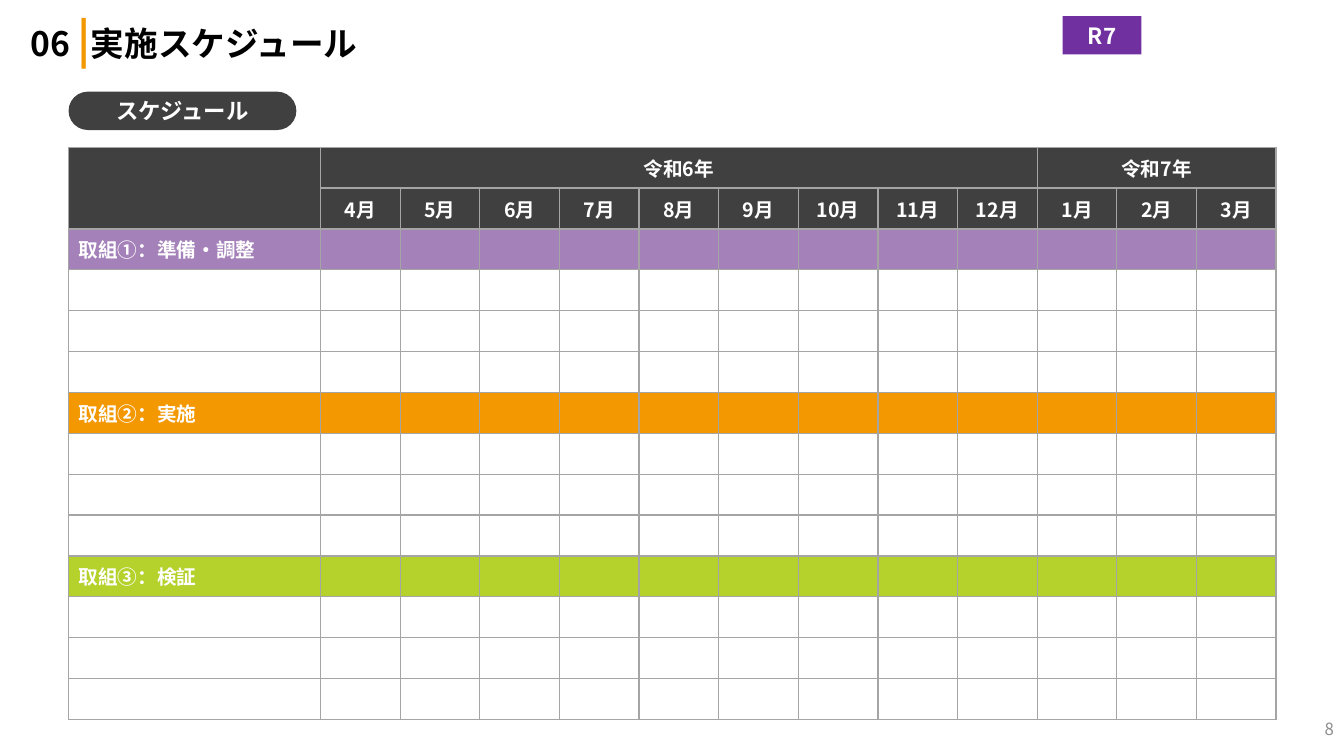
from lxml import etree
from pptx import Presentation
from pptx.dml.color import RGBColor
from pptx.enum.shapes import MSO_SHAPE
from pptx.enum.text import MSO_ANCHOR, PP_ALIGN
from pptx.oxml.ns import qn
from pptx.util import Inches, Pt

ROUND = MSO_SHAPE.ROUNDED_RECTANGLE
MIDDLE = MSO_ANCHOR.MIDDLE
LEFT, CENTER, RIGHT = PP_ALIGN.LEFT, PP_ALIGN.CENTER, PP_ALIGN.RIGHT
FONT = "Noto Sans CJK JP"
COLORS = {
    "black": "000000", "white": "FFFFFF", "dark": "404040",
    "grid": "A5A5A5", "page": "8C8C8C", "bar": "F29800",
    "badge": "7030A0", "lilac": "A481B9", "orange": "F39801",
    "lime": "B5D12C",
}


def color(name):
    return RGBColor.from_string(COLORS[name])


def write(frame, text, size=14, ink="white", bold=True, align=LEFT):
    """Add a formatted run to the first paragraph of a frame."""
    frame.vertical_anchor = MIDDLE
    para = frame.paragraphs[0]
    para.alignment = align
    run = para.add_run()
    run.text = text
    font = run.font
    font.size, font.bold, font.name = Pt(size), bold, FONT
    font.color.rgb = color(ink)
    east = etree.SubElement(run._r.get_or_add_rPr(), qn("a:ea"))
    east.set("typeface", FONT)


class Page:
    """One slide; boxes are left, top, width, height in percent of it."""

    def __init__(self, deck):
        self.wide, self.high = deck.slide_width, deck.slide_height
        self.slide = deck.slides.add_slide(deck.slide_layouts[5])

    def area(self, box):
        sides = (self.wide, self.high) * 2
        return [int(part * side / 100) for part, side in zip(box, sides)]

    def title(self, box, runs):
        shape = self.slide.shapes.title
        shape.left, shape.top, shape.width, shape.height = self.area(box)
        shape.text_frame.word_wrap = True
        for text, size, ink in runs:
            write(shape.text_frame, text, size=size, ink=ink)
        shape.text_frame.paragraphs[0].line_spacing = 0.9

    def label(self, box, text, fill, curve):
        shape = self.slide.shapes.add_shape(ROUND, *self.area(box))
        shape.adjustments[0] = curve
        shape.shadow.inherit = False
        shape.fill.solid()
        shape.fill.fore_color.rgb = color(fill)
        shape.line.fill.background()
        write(shape.text_frame, text, size=16, align=CENTER)

    def note(self, box, text, **style):
        shape = self.slide.shapes.add_textbox(*self.area(box))
        shape.text_frame.word_wrap = True
        write(shape.text_frame, text, **style)

    def table(self, box, rows, cols, first):
        left, top, width, height = self.area(box)
        frame = self.slide.shapes.add_table(rows, cols, left, top, width, height)
        table = frame.table
        table.first_row = table.horz_banding = False
        head = int(first * self.wide / 100)
        for i, col in enumerate(table.columns):
            col.width = (width - head) // (cols - 1) if i else head
        for row in table.rows:
            row.height = height // rows
        return table

    def cell(self, cell, text, fill, align):
        cell.margin_top = cell.margin_bottom = 0
        props = cell._tc.get_or_add_tcPr()
        for side in ("lnL", "lnR", "lnT", "lnB"):
            line = etree.SubElement(props, qn("a:" + side), w=str(Pt(1)))
            paint = etree.SubElement(line, qn("a:solidFill"))
            etree.SubElement(paint, qn("a:srgbClr"), val=COLORS["grid"])
        cell.fill.solid()
        cell.fill.fore_color.rgb = color(fill)
        cell.vertical_anchor = MIDDLE
        write(cell.text_frame, text, align=align)


def main():
    deck = Presentation()
    deck.slide_width, deck.slide_height = Inches(13.33), Inches(7.5)
    page = Page(deck)

    # Heading and section label
    page.title((1.5, 1.2, 81.77, 8.8), [
        ("06 ", 24, "black"), ("|", 32, "bar"), ("実施スケジュール", 24, "black")])
    page.label((5.1, 12.13, 16.95, 5.07), "スケジュール", "dark", 0.5)

    # Schedule: two header rows, then a band and three free rows per task
    years = {1: "令和6年", 10: "令和7年"}
    months = [f"{(i + 3) % 12 + 1}月" for i in range(12)]
    tasks = [("取組①：準備・調整", "lilac"), ("取組➁：実施", "orange"),
             ("取組③：検証", "lime")]
    step = 4
    rows, cols = 2 + step * len(tasks), 1 + len(months)
    texts = {(0, c): year for c, year in years.items()}
    texts.update({(1, c): month for c, month in enumerate(months, 1)})
    fills = {0: "dark", 1: "dark"}
    for i, (task, fill) in enumerate(tasks):
        row = 2 + step * i
        texts[row, 0], fills[row] = task, fill

    table = page.table((5.1, 19.47, 89.87, 75.73), rows, cols, 18.75)
    for r in range(rows):
        for c in range(cols):
            page.cell(table.cell(r, c), texts.get((r, c), ""),
                      fills.get(r, "white"), CENTER if r < 2 else LEFT)
    for start, end in (((0, 0), (1, 0)), ((0, 1), (0, 9)), ((0, 10), (0, 12))):
        table.cell(*start).merge(table.cell(*end))

    # Page number and year badge
    page.note((77.5, 94.8, 22.5, 3.33), "8", size=12, ink="page",
              bold=False, align=RIGHT)
    page.label((79.07, 2.13, 5.85, 5.07), "R7", "badge", 0)

    deck.save("out.pptx")


if __name__ == "__main__":
    main()
